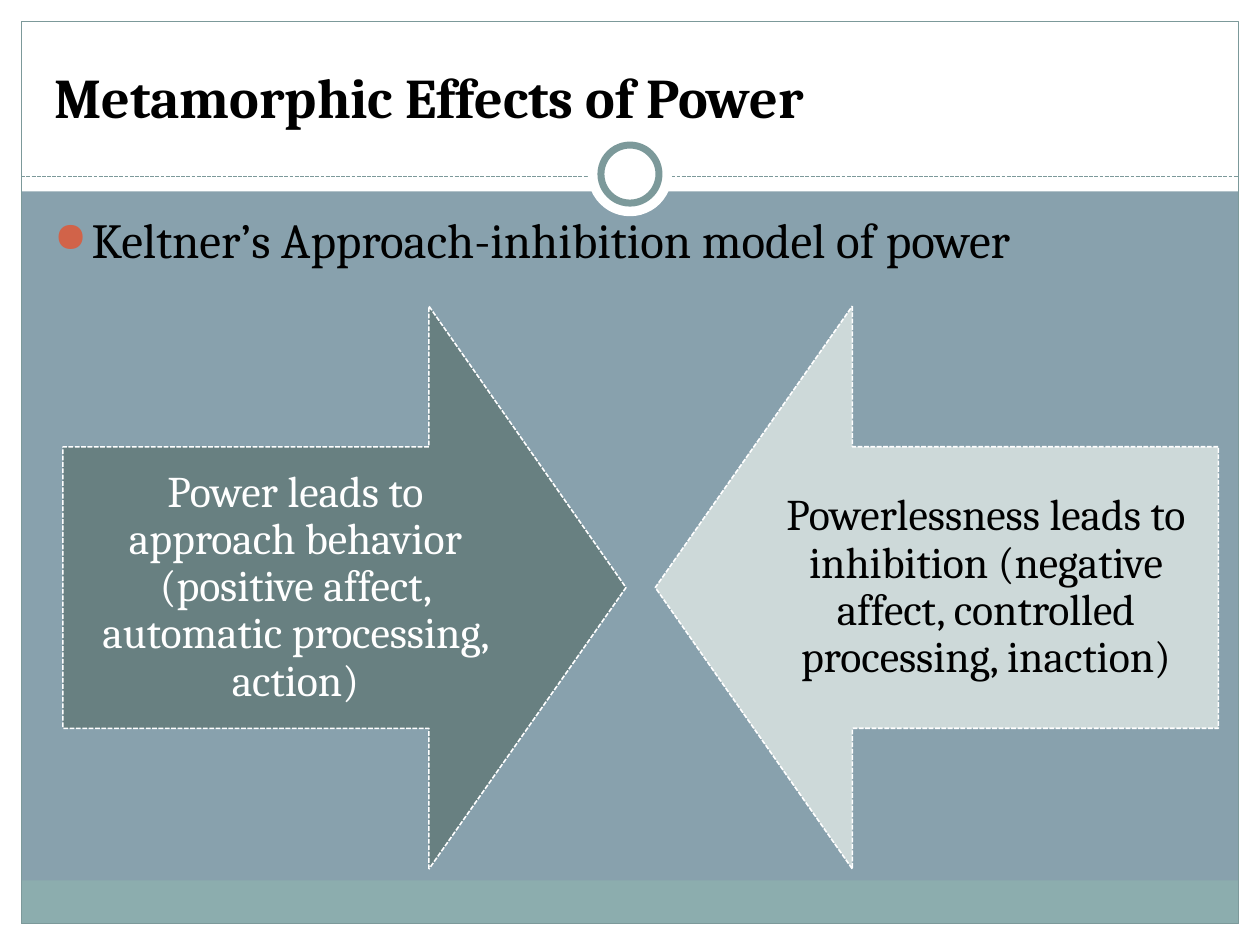
from lxml import etree
from pptx import Presentation, util as u
from pptx.dml.color import RGBColor
from pptx.enum import dml, shapes, text
from pptx.oxml import ns

COLORS = {
    "background": "88A1AD",
    "white": "FFFFFF",
    "black": "000000",
    "footer": "8CADAE",
    "frame": "7C999A",
    "bullet": "D16349",
    "power": "688081",
    "powerless": "CDD9D9",
}
FONT = "Cambria"
WIDTH, HEIGHT = 25.4, 19.05
MARGIN = 0.43
RULE_Y = 3.56
ARROW_SIZE, ARROW_TOP = 11.35, 6.17
LABEL_WIDTH, LABEL_HEIGHT = 9.37, 5.66


def color(name):
    return RGBColor.from_string(COLORS[name])


def style_line(line, name, width, dash=None):
    line.color.rgb = color(name)
    line.width = u.Pt(width)
    if dash:
        line.dash_style = dash


def add_shape(page, kind, left, top, width, height, fill=None, line=None, line_width=0.75, dash=None):
    shape = page.shapes.add_shape(kind, u.Cm(left), u.Cm(top), u.Cm(width), u.Cm(height))
    shape.shadow.inherit = False
    if fill:
        shape.fill.solid()
        shape.fill.fore_color.rgb = color(fill)
    else:
        shape.fill.background()
    if line:
        style_line(shape.line, line, line_width, dash)
    else:
        shape.line.fill.background()
    return shape


def add_circle(page, center_y, size, **style):
    add_shape(page, shapes.MSO_SHAPE.OVAL, (WIDTH - size) / 2, center_y - size / 2, size, size, **style)


def add_rule(page, y):
    rule = page.shapes.add_connector(
        shapes.MSO_CONNECTOR.STRAIGHT, u.Cm(MARGIN), u.Cm(y), u.Cm(WIDTH - MARGIN), u.Cm(y))
    style_line(rule.line, "frame", 0.75, dml.MSO_LINE.SQUARE_DOT)
    etree.SubElement(rule.element.spPr, ns.qn("a:effectLst"))


def add_text(page, words, left, top, width, height, size, fill="black", bold=False,
             align=text.PP_ALIGN.LEFT, anchor=text.MSO_ANCHOR.TOP, inset=None, spacing=None, before=None):
    box = page.shapes.add_textbox(u.Cm(left), u.Cm(top), u.Cm(width), u.Cm(height))
    frame = box.text_frame
    frame.word_wrap = True
    frame.vertical_anchor = anchor
    if inset is not None:
        frame.margin_left = frame.margin_right = u.Cm(inset)
        frame.margin_top = frame.margin_bottom = u.Cm(inset)
    para = frame.paragraphs[0]
    para.alignment = align
    if spacing:
        para.line_spacing = spacing
    if before:
        para.space_before = u.Pt(before)
    span = para.add_run()
    span.text = words
    span.font.name = FONT
    span.font.size = u.Pt(size)
    span.font.bold = bold
    span.font.color.rgb = color(fill)
    return para


def add_bullet(para, indent):
    props = para._p.get_or_add_pPr()
    props.set("marL", str(u.Cm(indent)))
    props.set("indent", str(-u.Cm(indent)))
    bullet_color = etree.SubElement(props, ns.qn("a:buClr"))
    etree.SubElement(bullet_color, ns.qn("a:srgbClr"), val=COLORS["bullet"])
    etree.SubElement(props, ns.qn("a:buSzPct"), val="85000")
    etree.SubElement(props, ns.qn("a:buChar"), char="●")


def add_arrow(page, words, left, label_left, rotation, fill, ink):
    arrow = add_shape(page, shapes.MSO_SHAPE.DOWN_ARROW, left, ARROW_TOP, ARROW_SIZE, ARROW_SIZE,
                      fill=fill, line="white", line_width=0.9, dash=dml.MSO_LINE.SQUARE_DOT)
    arrow.adjustments[0] = 0.5
    arrow.adjustments[1] = 0.35
    arrow.rotation = rotation
    add_text(page, words, label_left, ARROW_TOP + (ARROW_SIZE - LABEL_HEIGHT) / 2,
             LABEL_WIDTH, LABEL_HEIGHT, size=25, fill=ink, align=text.PP_ALIGN.CENTER,
             anchor=text.MSO_ANCHOR.MIDDLE, inset=0.48, spacing=0.9)


def add_backdrop(page):
    page.background.fill.solid()
    page.background.fill.fore_color.rgb = color("background")
    rectangle = shapes.MSO_SHAPE.RECTANGLE
    for area in (
        (0, HEIGHT - MARGIN, WIDTH, MARGIN),
        (0, 0, WIDTH, 3.86),
        (0, 0, MARGIN, HEIGHT),
        (WIDTH - MARGIN, 0, MARGIN, HEIGHT),
    ):
        add_shape(page, rectangle, *area, fill="white")
    inner_width = WIDTH - 2 * MARGIN
    add_shape(page, rectangle, MARGIN, 17.75, inner_width, 0.87, fill="footer")
    add_shape(page, rectangle, MARGIN, MARGIN, inner_width, HEIGHT - 2 * MARGIN, line="frame")
    add_rule(page, RULE_Y)
    add_circle(page, 3.51, 1.7, fill="white")
    add_circle(page, 3.51, 1.17, fill="white", line="frame", line_width=4)


def main():
    deck = Presentation()
    deck.slide_width, deck.slide_height = u.Cm(WIDTH), u.Cm(HEIGHT)
    page = deck.slides.add_slide(deck.slide_layouts[6])
    add_backdrop(page)
    add_text(page, "Metamorphic Effects of Power", 0.84, 0.64, 23.7, 2.11,
             size=32, bold=True, anchor=text.MSO_ANCHOR.BOTTOM)
    body = add_text(page, "Keltner’s Approach-inhibition model of power", 0.84, 4.24, 23.62, 6.12,
                    size=28, spacing=0.9, before=5.6)
    add_bullet(body, 0.76)
    add_arrow(page, "Power leads to approach behavior (positive affect, automatic processing, action)",
              1.27, 1.27, 270, "power", "white")
    right = 13.21
    add_arrow(page, "Powerlessness leads to inhibition (negative affect, controlled processing, inaction)",
              right, right + ARROW_SIZE - LABEL_WIDTH, 90, "powerless", "black")
    deck.save("out.pptx")


if __name__ == "__main__":
    main()
